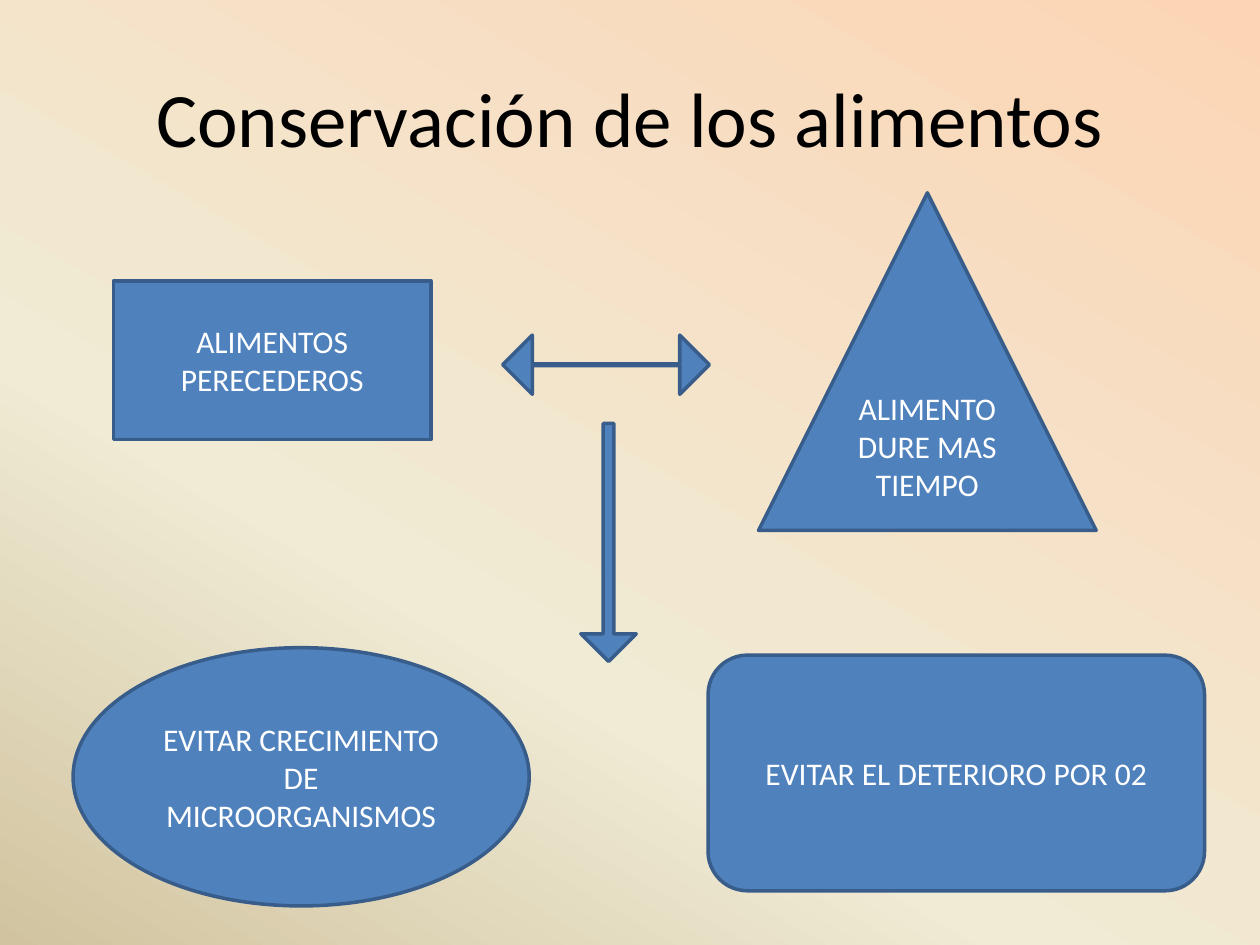
from copy import deepcopy
from dataclasses import dataclass

from pptx import Presentation
from pptx.dml.color import RGBColor
from pptx.enum.shapes import MSO_SHAPE
from pptx.enum.text import MSO_ANCHOR, PP_ALIGN
from pptx.oxml.ns import qn
from pptx.slide import Slide
from pptx.text.text import TextFrame
from pptx.util import Inches, Pt

FONT = "Calibri"
BLUE, DARK_BLUE = "4F81BD", "385D8A"
BLACK, WHITE = "000000", "FFFFFF"
BACKGROUND_STOPS = [(0, "FCD5B5"), (0.65, "F0EBD5"), (1, "D1C39F")]


@dataclass
class Figure:
    kind: MSO_SHAPE
    left: float
    top: float
    width: float
    height: float
    text: str = ""
    adjustments: tuple[float, ...] = ()


FIGURES = [
    Figure(MSO_SHAPE.RECTANGLE, 0.9, 2.23, 2.52, 1.26, "ALIMENTOS PERECEDEROS"),
    Figure(MSO_SHAPE.ISOSCELES_TRIANGLE, 6.02, 1.53, 2.68, 2.68, "ALIMENTO DURE MAS TIEMPO"),
    Figure(MSO_SHAPE.OVAL, 0.58, 5.14, 3.62, 2.05, "EVITAR CRECIMIENTO DE MICROORGANISMOS"),
    Figure(MSO_SHAPE.ROUNDED_RECTANGLE, 5.62, 5.2, 3.94, 1.87, "EVITAR EL DETERIORO POR 02"),
    Figure(MSO_SHAPE.LEFT_RIGHT_ARROW, 3.99, 2.66, 1.64, 0.47, adjustments=(0.03, 0.5)),
    Figure(MSO_SHAPE.DOWN_ARROW, 4.61, 3.36, 0.44, 1.89, adjustments=(0.19, 0.5)),
]


def color(value: str) -> RGBColor:
    return RGBColor.from_string(value)


def paint_background(slide: Slide) -> None:
    fill = slide.background.fill
    fill.gradient()
    fill.gradient_angle = 240  # counter-clockwise: from top right to bottom left
    # The default gradient has two stops; a third is added
    stop_list = slide.element.find(".//" + qn("a:gsLst"))
    stop_list.append(deepcopy(stop_list[-1]))
    for stop, (position, value) in zip(fill.gradient_stops, BACKGROUND_STOPS):
        stop.position = position
        stop.color.rgb = color(value)


def write_text(frame: TextFrame, text: str, size: float, text_color: str) -> None:
    frame.word_wrap = True
    frame.vertical_anchor = MSO_ANCHOR.MIDDLE
    paragraph = frame.paragraphs[0]
    paragraph.text = text
    paragraph.alignment = PP_ALIGN.CENTER
    paragraph.font.name = FONT
    paragraph.font.size = Pt(size)
    paragraph.font.color.rgb = color(text_color)


def draw_figure(slide: Slide, figure: Figure) -> None:
    shape = slide.shapes.add_shape(
        figure.kind, Inches(figure.left), Inches(figure.top),
        Inches(figure.width), Inches(figure.height))
    for index, value in enumerate(figure.adjustments):
        shape.adjustments[index] = value
    shape.shadow.inherit = False
    shape.fill.solid()
    shape.fill.fore_color.rgb = color(BLUE)
    shape.line.color.rgb = color(DARK_BLUE)
    shape.line.width = Pt(2)
    if figure.text:
        write_text(shape.text_frame, figure.text, 18, WHITE)


def main() -> None:
    presentation = Presentation()
    presentation.slide_width, presentation.slide_height = Inches(10), Inches(7.5)
    slide = presentation.slides.add_slide(presentation.slide_layouts[6])
    paint_background(slide)

    # Title
    title = slide.shapes.add_textbox(Inches(0.5), Inches(0.3), Inches(9), Inches(1.25))
    write_text(title.text_frame, "Conservación de los alimentos", 44, BLACK)

    # Labelled figures and the arrows between them
    for figure in FIGURES:
        draw_figure(slide, figure)

    presentation.save("out.pptx")


if __name__ == "__main__":
    main()
